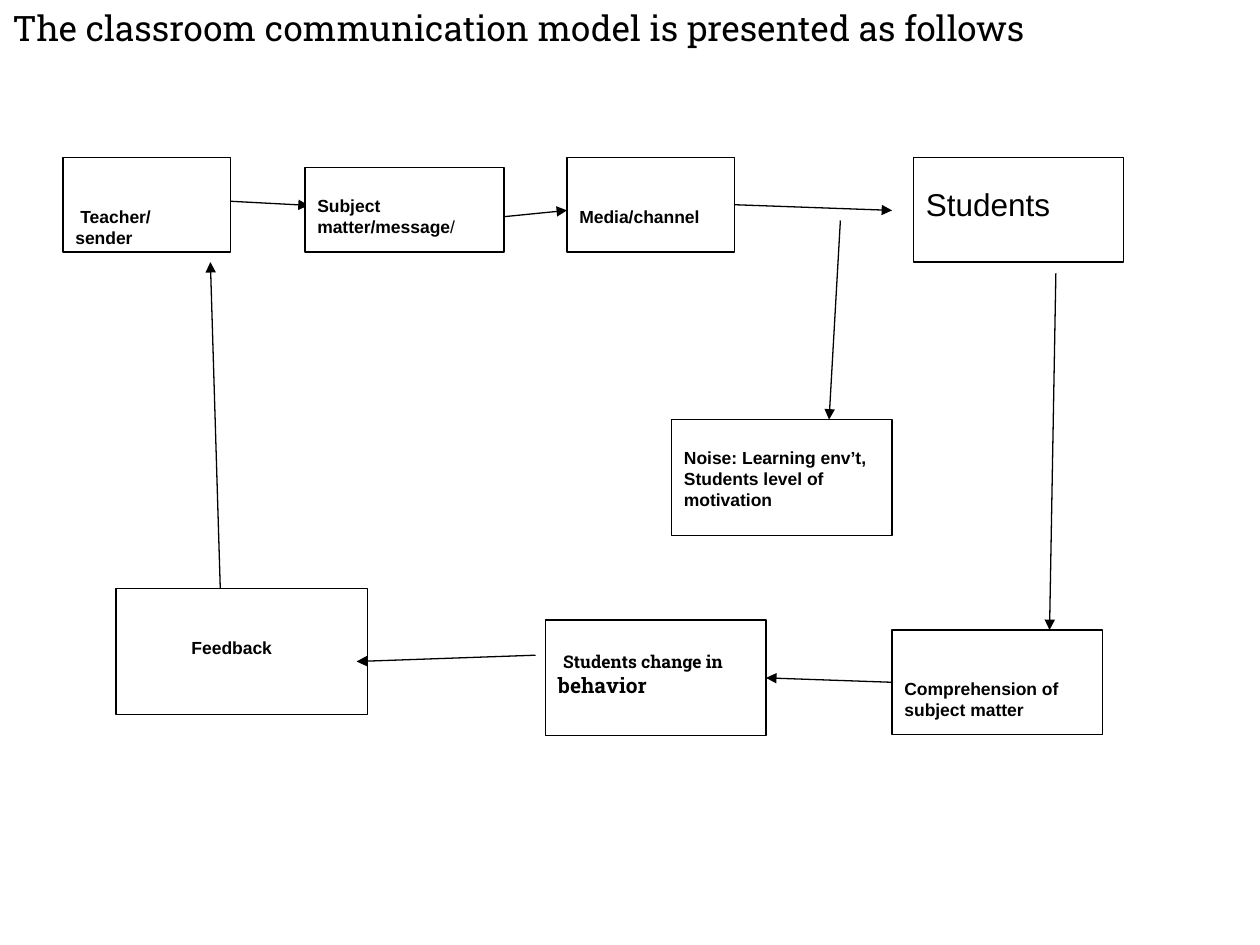
"""Build the classroom communication model slide."""
import pptx
import pptx.dml.color
import pptx.enum.shapes
import pptx.enum.text
import pptx.util
from lxml import etree
from pptx.oxml.ns import qn

Inches = pptx.util.Inches
Pt = pptx.util.Pt
COLORS = {"ink": "000000", "paper": "FFFFFF"}
SANS, SLAB = "Arial", "Roboto Slab"
LINE_HEIGHT = 0.167

# name: (left, top, width, height), lines above the text, left inset, first indent, runs
BOXES = {
    "teacher": ((0.5, 1.25, 1.33, 0.75), 2, 0.1, 0.04,
                [("Teacher/ sender", SANS, 10, True)]),
    "subject": ((2.42, 1.33, 1.58, 0.67), 1, 0.1, 0,
                [("Subject matter/message", SANS, 10, True), ("/", SANS, 10, False)]),
    "media": ((4.5, 1.25, 1.33, 0.75), 2, 0.1, 0,
              [("Media/channel", SANS, 10, True)]),
    "noise": ((5.33, 3.33, 1.75, 0.92), 1, 0.1, 0,
              [("Noise: Learning env’t, Students level of motivation", SANS, 10, True)]),
    "comprehension": ((7.08, 5, 1.67, 0.83), 2, 0.1, 0,
                      [("Comprehension of subject matter", SANS, 10, True)]),
    "change": ((4.33, 4.92, 1.75, 0.92), 1, 0.1, 0.04,
               [("Students change in", SLAB, 10, True), (" behavior", SLAB, 12, True)]),
    "feedback": ((0.92, 4.67, 2, 1), 2, 0.6, 0,
                 [("Feedback", SANS, 10, True)]),
    "students": ((7.25, 1.25, 1.67, 0.83), 1, 0.1, 0,
                 [("Students", SANS, 18, False)]),
}
ARROWS_BEHIND = [
    ((1.5, 1.58), (2.45, 1.63)),
    ((1.75, 4.73), (1.67, 2.08)),
]
ARROWS_IN_FRONT = [
    ((6.67, 1.75), (6.58, 3.33)),
    ((8.38, 2.17), (8.33, 5)),
    ((4.25, 5.2), (2.83, 5.25)),
    ((4, 1.72), (4.5, 1.67)),
]


def rgb(name):
    return pptx.dml.color.RGBColor.from_string(COLORS[name])


def add_run(p, text, font, size, bold):
    r = p.add_run()
    r.text = text
    r.font.name = font
    r.font.size = Pt(size)
    r.font.bold = bold
    r.font.color.rgb = rgb("ink")


def set_title(s, text):
    sp = s.shapes.title
    sp.left, sp.top, sp.width, sp.height = (Inches(v) for v in (0, 0, 10, 1.48))
    tf = sp.text_frame
    tf.auto_size = pptx.enum.text.MSO_AUTO_SIZE.NONE
    tf.vertical_anchor = pptx.enum.text.MSO_ANCHOR.TOP
    p = tf.paragraphs[0]
    p.alignment = pptx.enum.text.PP_ALIGN.LEFT
    add_run(p, text, SLAB, 20, False)


def add_box(s, place, lines_above, inset, indent, runs):
    sp = s.shapes.add_shape(pptx.enum.shapes.MSO_SHAPE.RECTANGLE,
                            *(Inches(v) for v in place))
    sp.shadow.inherit = False
    sp.fill.solid()
    sp.fill.fore_color.rgb = rgb("paper")
    sp.line.color.rgb = rgb("ink")
    sp.line.width = Pt(0.75)
    tf = sp.text_frame
    tf.word_wrap = True
    tf.vertical_anchor = pptx.enum.text.MSO_ANCHOR.TOP
    tf.margin_left = Inches(inset)
    tf.margin_right = Inches(0.25 if indent else 0.1)
    tf.margin_top = Inches(0.05 + lines_above * LINE_HEIGHT)
    p = tf.paragraphs[0]
    p.alignment = pptx.enum.text.PP_ALIGN.LEFT
    if indent:
        p._p.get_or_add_pPr().set("indent", str(Inches(indent)))
    for run in runs:
        add_run(p, *run)
    return sp


def add_arrow(s, start, end):
    c = s.shapes.add_connector(pptx.enum.shapes.MSO_CONNECTOR.STRAIGHT,
                               *(Inches(v) for v in start + end))
    c.line.color.rgb = rgb("ink")
    c.line.width = Pt(0.75)
    etree.SubElement(c.line._get_or_add_ln(), qn("a:tailEnd"), type="triangle")
    etree.SubElement(c._element.spPr, qn("a:effectLst"))
    return c


def main():
    prs = pptx.Presentation()
    prs.slide_width, prs.slide_height = Inches(10), Inches(7.5)
    s = prs.slides.add_slide(prs.slide_layouts[5])
    set_title(s, "The classroom communication model is presented as follows")
    for start, end in ARROWS_BEHIND:
        add_arrow(s, start, end)
    boxes = {name: add_box(s, *box) for name, box in BOXES.items()}
    for start, end in ARROWS_IN_FRONT:
        add_arrow(s, start, end)
    to_students = add_arrow(s, (5.83, 1.62), (7.08, 1.67))
    to_students.begin_connect(boxes["media"], 3)
    to_change = add_arrow(s, (7.08, 5.42), (6.08, 5.37))
    to_change.begin_connect(boxes["comprehension"], 1)
    to_change.end_connect(boxes["change"], 3)
    prs.save("out.pptx")


if __name__ == "__main__":
    main()
